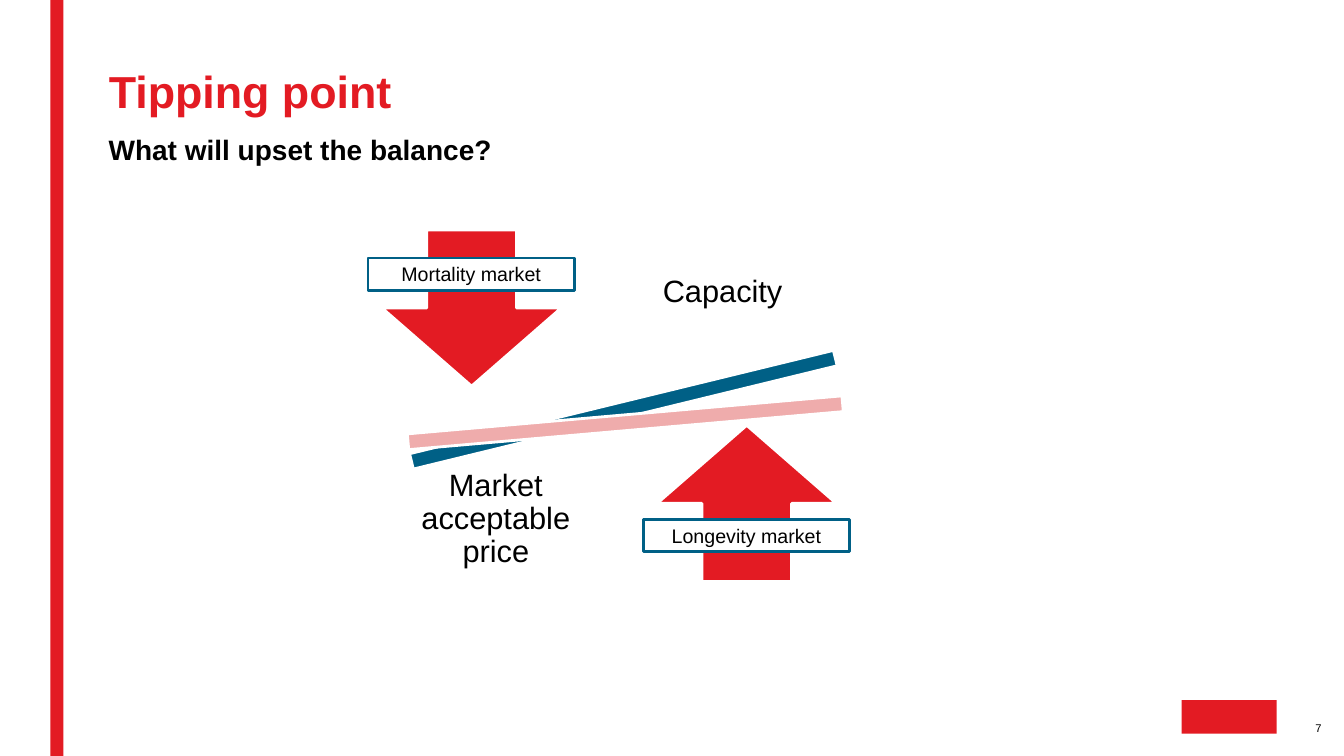
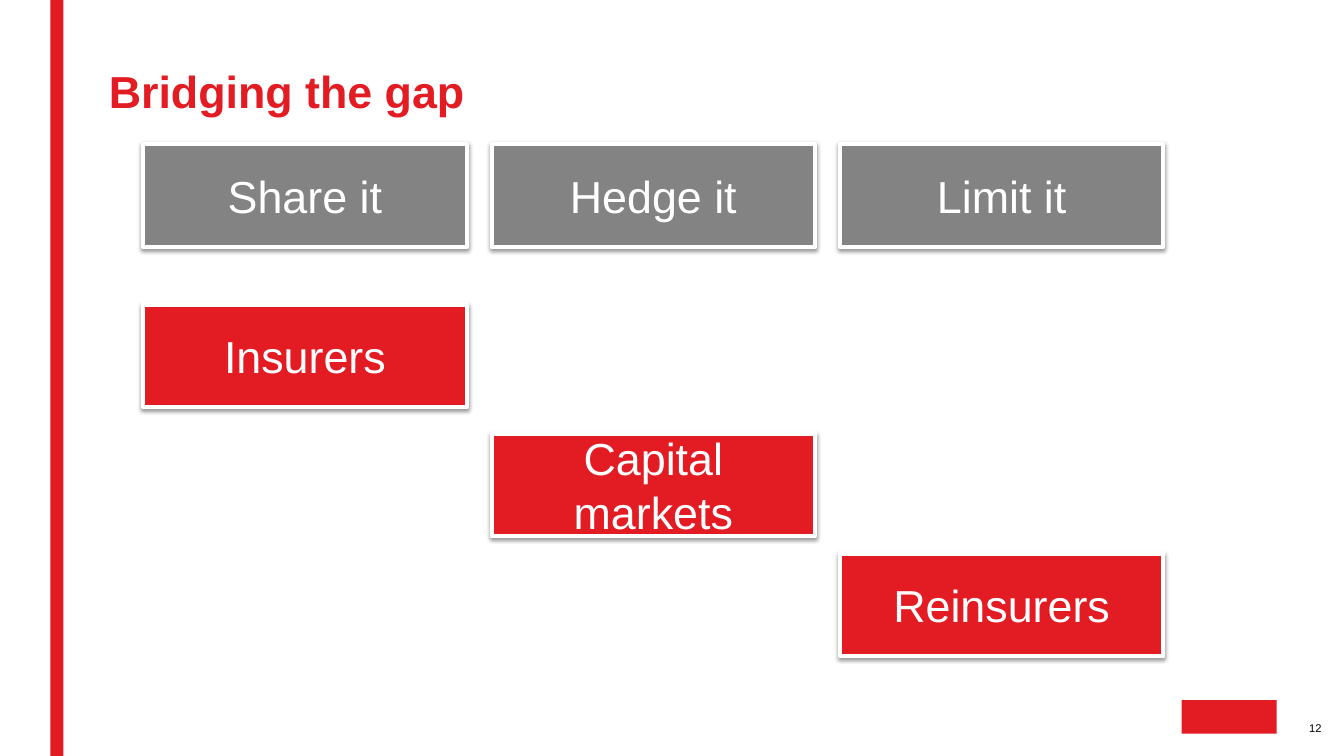
"""Build two slides on the tipping point and on bridging the gap."""
from lxml import etree
from pptx import Presentation
from pptx.dml.color import RGBColor
from pptx.enum import shapes, text
from pptx.oxml import ns
from pptx.util import Pt

RED, BLUE, PINK, GRAY = "E31B23", "006086", "EFACAC", "848383"
BLACK, WHITE = "000000", "FFFFFF"
FONT = "Arial"
KIND = shapes.MSO_SHAPE
ALIGN = text.PP_ALIGN
ANCHOR = text.MSO_ANCHOR
hex_color = RGBColor.from_string


def paint(shape, fill, line=None, width=2):
    shape.shadow.inherit = False
    shape.fill.solid()
    shape.fill.fore_color.rgb = hex_color(fill)
    if line:
        shape.line.color.rgb = hex_color(line)
        shape.line.width = Pt(width)
    else:
        shape.line.fill.background()


def write(shape, words, size, color=BLACK, bold=False, align=ALIGN.LEFT,
          anchor=ANCHOR.MIDDLE, spacing=1.0, inset=None):
    frame = shape.text_frame
    frame.word_wrap = True
    frame.auto_size = text.MSO_AUTO_SIZE.NONE
    frame.vertical_anchor = anchor
    if inset is not None:
        frame.margin_left = frame.margin_right = Pt(inset)
        frame.margin_top = frame.margin_bottom = Pt(inset)
    frame.text = words
    paragraph = frame.paragraphs[0]
    paragraph.alignment = align
    paragraph.line_spacing = spacing
    paragraph.space_before = Pt(0)
    font = paragraph.font
    font.name, font.size, font.bold = FONT, Pt(size), bold
    font.color.rgb = hex_color(color)


presentation = Presentation()
presentation.slide_width, presentation.slide_height = Pt(960), Pt(540)
title_only = presentation.slide_layouts[5]

slides = []
for heading, number in (("Tipping point", "7"), ("Bridging the gap", "12")):
    slide = presentation.slides.add_slide(title_only)
    slides.append(slide)
    title = slide.shapes.title
    title.left, title.top, title.width, title.height = Pt(70.5), Pt(0), Pt(842), Pt(88)
    write(title, heading, 32, color=RED, bold=True, anchor=ANCHOR.BOTTOM, spacing=0.9)
    band = slide.shapes.add_shape(KIND.RECTANGLE, Pt(36), Pt(0), Pt(9.4), Pt(540))
    paint(band, RED)
    logo_block = slide.shapes.add_shape(KIND.RECTANGLE, Pt(844), Pt(500), Pt(68), Pt(24))
    paint(logo_block, RED)
    page = slide.shapes.add_textbox(Pt(898), Pt(515.5), Pt(46), Pt(9.5))
    write(page, number, 8, align=ALIGN.RIGHT, anchor=ANCHOR.BOTTOM, spacing=0.9, inset=0)

tipping, bridging = slides

subtitle = tipping.shapes.add_textbox(Pt(70.5), Pt(93.5), Pt(842), Pt(30))
write(subtitle, "What will upset the balance?", 20, bold=True, anchor=ANCHOR.TOP, spacing=0.9)

for kind, left, top, width, height, rotation, fill in (
    (KIND.MATH_MINUS, 233.3, 268.6, 424, 48.2, 346.3, BLUE),
    (KIND.DOWN_ARROW, 272.9, 164.2, 128, 111.6, 0, RED),
    (KIND.UP_ARROW, 469.4, 303.8, 128, 111.6, 0, RED),
    (KIND.MATH_MINUS, 234.7, 277.9, 424, 48.2, 355, PINK),
):
    shape = tipping.shapes.add_shape(kind, Pt(left), Pt(top), Pt(width), Pt(height))
    shape.rotation = rotation
    paint(shape, fill, WHITE)

for words, left, top in (("Capacity", 447.8, 150.5), ("Market acceptable price", 285.8, 312.5)):
    label = tipping.shapes.add_textbox(Pt(left), Pt(top), Pt(136.8), Pt(117.4))
    write(label, words, 22, align=ALIGN.CENTER, spacing=0.9, inset=12)

for words, left, top in (("Longevity market", 459.4, 370.8), ("Mortality market", 262.8, 184.3)):
    tag = tipping.shapes.add_shape(KIND.RECTANGLE, Pt(left), Pt(top), Pt(147.6), Pt(23))
    paint(tag, WHITE, BLUE)
    write(tag, words, 14, align=ALIGN.CENTER)

columns = (("Share it", "Insurers", 217.5),
           ("Hedge it", "Capital markets", 309.6),
           ("Limit it", "Reinsurers", 395.3))
for index, (action, party, party_top) in enumerate(columns):
    left = 102.4 + index * 248.8
    for words, top, fill in ((action, 103, GRAY), (party, party_top, RED)):
        card = bridging.shapes.add_shape(KIND.RECTANGLE, Pt(left), Pt(top), Pt(231), Pt(73.5))
        paint(card, fill, WHITE, 3)
        effects = card.element.spPr.find(ns.qn("a:effectLst"))
        shadow = etree.SubElement(effects, ns.qn("a:outerShdw"), blurRad=str(Pt(3.1)),
                                  dist=str(Pt(1.6)), dir="5400000", rotWithShape="0")
        shade = etree.SubElement(shadow, ns.qn("a:srgbClr"), val=BLACK)
        etree.SubElement(shade, ns.qn("a:alpha"), val="38000")
        write(card, words, 32, color=WHITE, align=ALIGN.CENTER)

presentation.save("out.pptx")
